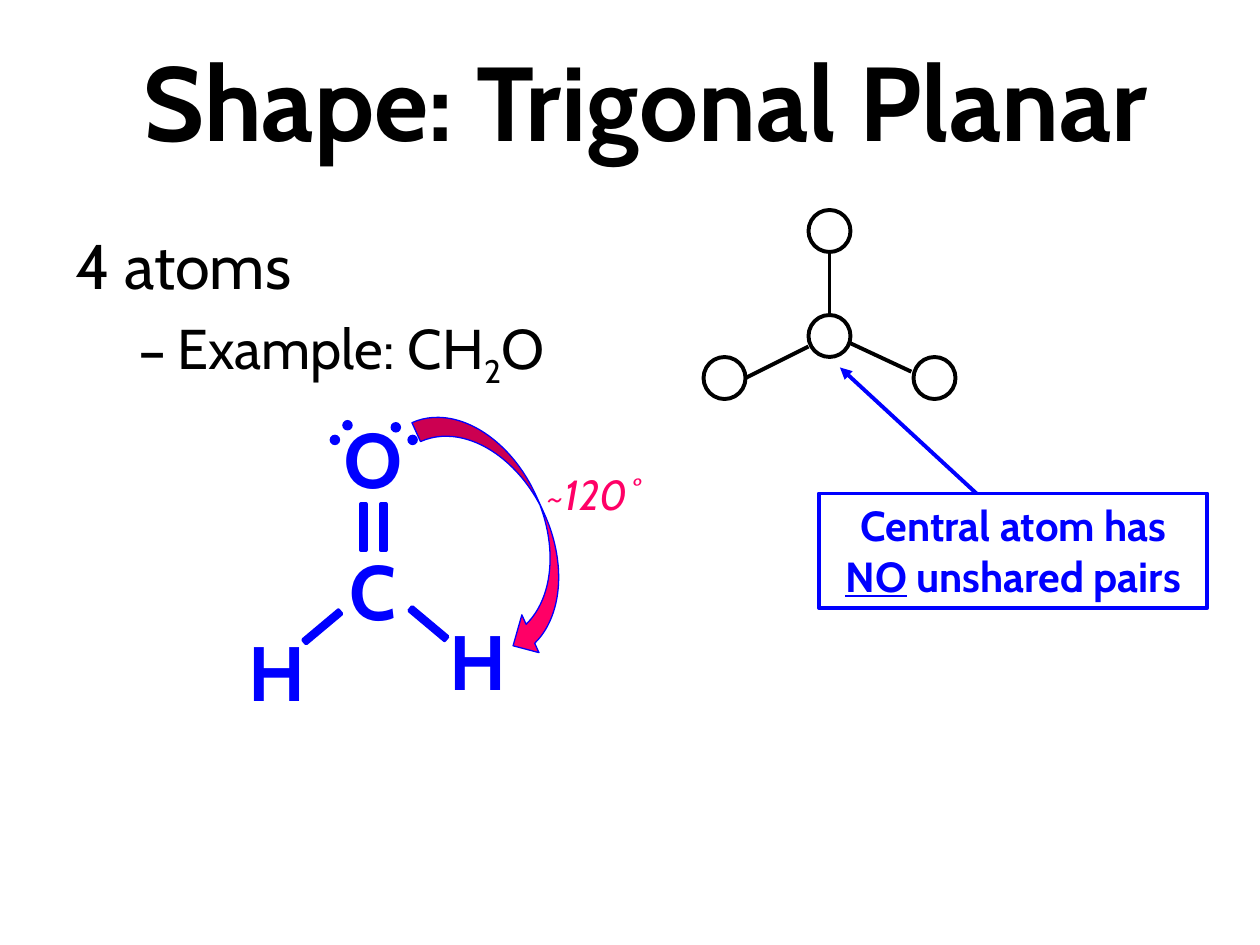
from lxml.etree import SubElement
from pptx import Presentation
from pptx.dml.color import RGBColor
from pptx.enum.shapes import MSO_CONNECTOR, MSO_SHAPE
from pptx.enum.text import MSO_ANCHOR, MSO_AUTO_SIZE, PP_ALIGN
from pptx.oxml.ns import qn
from pptx.util import Inches, Pt

BLACK = RGBColor(0x00, 0x00, 0x00)
WHITE = RGBColor(0xFF, 0xFF, 0xFF)
BLUE = RGBColor(0x00, 0x00, 0xFF)
PINK = RGBColor(0xFF, 0x00, 0x66)
FONT = "Cabin"
COLUMNS, ROWS = 120, 90
WIDTH, HEIGHT = Inches(10), Inches(7.5)


def place(*cells):
    """Turn alternating column and row counts into slide lengths."""
    steps = (WIDTH / COLUMNS, HEIGHT / ROWS)
    return [round(cell * steps[i % 2]) for i, cell in enumerate(cells)]


def add_run(p, text, size, color, **formats):
    """Append a run whose font takes the given format values."""
    r = p.add_run()
    r.text = text
    r.font.color.rgb = color
    for name, value in {"name": FONT, "size": Pt(size), **formats}.items():
        setattr(r.font, name, value)
    return r


def add_text(shapes, cells, text="", size=24, color=BLUE, align=PP_ALIGN.CENTER,
             fit=MSO_AUTO_SIZE.SHAPE_TO_FIT_TEXT, **formats):
    """Add a wrapping text box with one paragraph."""
    s = shapes.add_textbox(*place(*cells))
    tf = s.text_frame
    tf.word_wrap = True
    tf.auto_size = fit
    p = tf.paragraphs[0]
    p.alignment = align
    if text:
        add_run(p, text, size, color, **formats)
    return s


def add_figure(shapes, kind, cells, fill, line=None, weight=2.25, turn=0):
    """Add a filled preset shape, outlined when a line colour is given."""
    s = shapes.add_shape(kind, *place(*cells))
    s.shadow.inherit = False
    s.rotation = turn
    s.fill.solid()
    s.fill.fore_color.rgb = fill
    if line is None:
        s.line.fill.background()
    else:
        s.line.color.rgb = line
        s.line.width = Pt(weight)
    return s


def add_line(shapes, cells, color, arrow=False):
    """Add a straight line, with an arrowhead at its end on request."""
    s = shapes.add_connector(MSO_CONNECTOR.STRAIGHT, *place(*cells))
    s.line.color.rgb = color
    s.line.width = Pt(2.25)
    if arrow:
        SubElement(s.line._get_or_add_ln(), qn("a:tailEnd"), type="triangle")
    SubElement(s._element.spPr, qn("a:effectLst"))
    return s


def add_body(shapes):
    """Add the main point and its dashed example."""
    s = add_text(shapes, (6, 21, 108, 59.4), "4 atoms", 36, BLACK,
                 PP_ALIGN.LEFT, MSO_AUTO_SIZE.NONE)
    p = s.text_frame.add_paragraph()
    p.space_before = Pt(6.4)
    pPr = p._p.get_or_add_pPr()
    pPr.set("marL", str(Inches(0.81)))
    pPr.set("indent", str(Inches(-0.31)))
    SubElement(pPr, qn("a:buFont"), typeface=FONT)
    SubElement(pPr, qn("a:buChar"), char="–")
    add_run(p, "Example: CH", 32, BLACK)
    subscript = add_run(p, "2", 32, BLACK)
    subscript.font._element.set("baseline", "-25000")
    add_run(p, "O", 32, BLACK)


def add_ball_model(shapes):
    """Draw the central atom, its three neighbours and their bonds."""
    group = shapes.add_group_shape().shapes
    for column, row in ((77, 30), (67, 34), (87, 34), (77, 20)):
        add_figure(group, MSO_SHAPE.OVAL, (column, row, 4, 4), WHITE, BLACK)
    for bond in ((71, 36, 77, 33), (80.8, 32.6, 86.8, 35.4), (79, 29.8, 79, 24)):
        add_line(group, bond, BLACK)


def add_callout(shapes):
    """Add the outlined remark and the arrow to the central atom."""
    s = add_text(shapes, (78, 47, 37, 10.9))
    s.line.color.rgb = BLUE
    s.line.width = Pt(2.25)
    p = s.text_frame.paragraphs[0]
    for text, underline in (("Central atom has ", False), ("NO", True),
                            (" unshared pairs", False)):
        add_run(p, text, 24, BLUE, bold=True, underline=underline)
    add_line(shapes, (93, 47, 80, 35), BLUE, arrow=True)


def add_formula(shapes):
    """Draw the structural formula with its bonds and lone pairs."""
    group = shapes.add_group_shape().shapes
    for symbol, column, row, turn in (("C", 30, 51.2, 0), ("O", 30, 39.2, 180),
                                      ("H", 20.9, 58.9, 0), ("H", 40, 57.8, 0)):
        s = add_text(group, (column, row, 11, 10.1), symbol, 44, bold=True)
        s.rotation = turn
    for column, row, turn in ((37.8, 58.4, 40), (27.7, 58.7, 320),
                              (33.5, 49.2, 90), (31.6, 49.2, 90)):
        add_figure(group, MSO_SHAPE.MATH_MINUS, (column, row, 6, 2), BLUE, BLUE, 2, turn)
    for column, row in ((37.2, 40.2), (38.8, 41.4), (31.4, 41.4), (32.6, 40)):
        add_figure(group, MSO_SHAPE.OVAL, (column, row, 1, 1), BLUE)


def add_angle(shapes):
    """Add the curved arrow and the bond angle beside it."""
    add_figure(shapes, MSO_SHAPE.CURVED_DOWN_ARROW, (35.4, 46.2, 25.3, 7.9),
               PINK, BLUE, 0.75, 65.6)
    add_text(shapes, (48, 44, 16, 6.1), " ~120˚", 24, PINK, italic=True)


def main():
    """Build the slide and save it."""
    prs = Presentation()
    prs.slide_width, prs.slide_height = WIDTH, HEIGHT
    shapes = prs.slides.add_slide(prs.slide_layouts[6]).shapes
    title = add_text(shapes, (6, 2, 111, 15), "Shape: Trigonal Planar", 60, BLACK,
                     fit=MSO_AUTO_SIZE.NONE, bold=True)
    title.text_frame.vertical_anchor = MSO_ANCHOR.MIDDLE
    add_body(shapes)
    add_ball_model(shapes)
    add_callout(shapes)
    add_formula(shapes)
    add_angle(shapes)
    prs.save("out.pptx")


if __name__ == "__main__":
    main()
